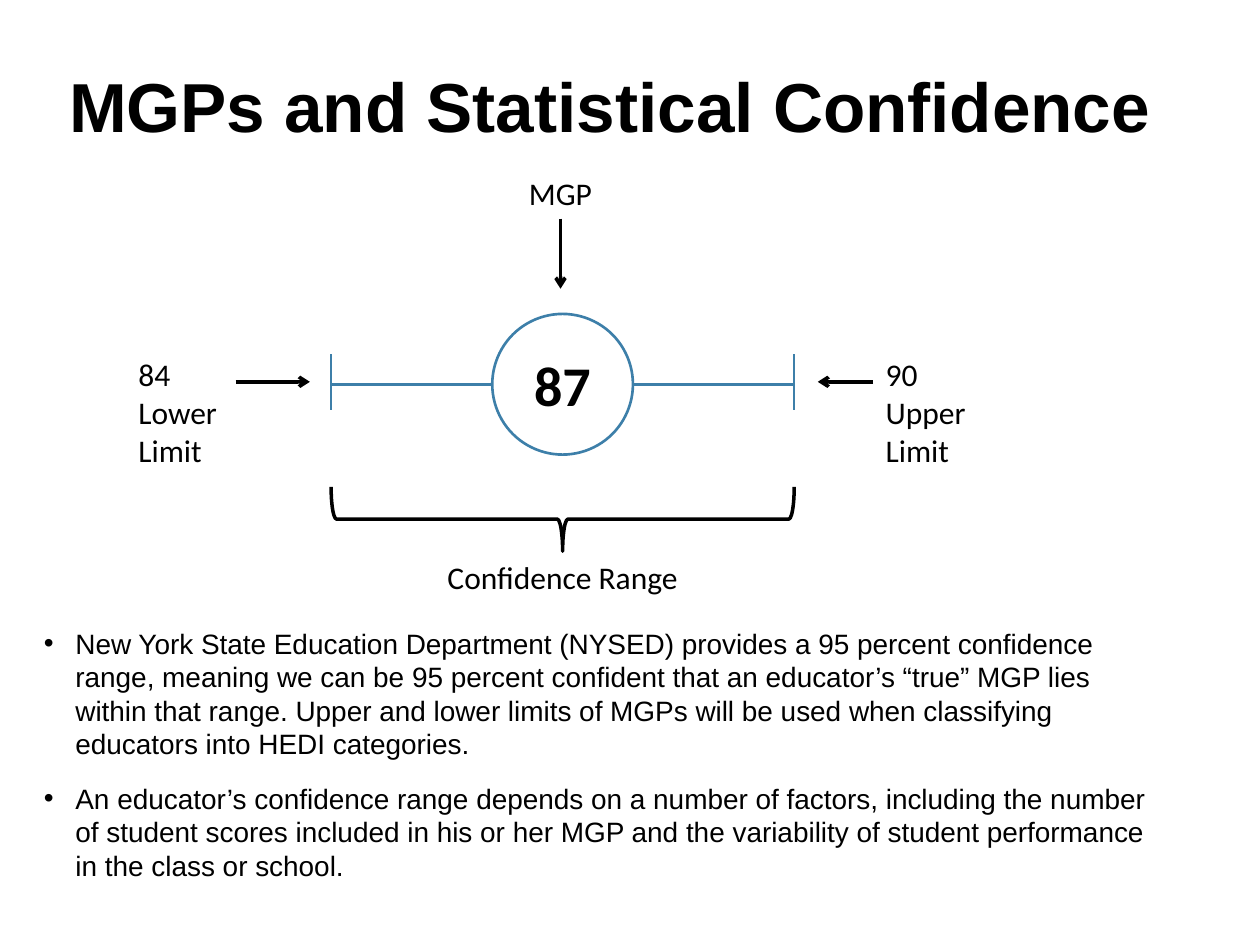
from lxml.etree import SubElement
from pptx import Presentation
from pptx.dml.color import RGBColor
from pptx.enum.shapes import MSO_CONNECTOR, MSO_SHAPE
from pptx.enum.text import MSO_ANCHOR, PP_ALIGN
from pptx.oxml.ns import qn
from pptx.util import Pt

BLACK, BLUE = "000000", "3D7FA9"
LABEL = {"name": "Calibri", "size": Pt(18)}
TITLE = {"name": "Arial", "size": Pt(39.6), "bold": True}
BODY = {"name": "Arial", "size": Pt(16)}
VALUE = {"name": "Calibri", "size": Pt(32), "bold": True}


def color(hex_string):
    return RGBColor.from_string(hex_string)


class Page:
    def __init__(self, prs):
        self.s = prs.slides.add_slide(prs.slide_layouts[6])

    def fill_text(self, sp, lines, font, align=PP_ALIGN.LEFT, anchor=MSO_ANCHOR.TOP,
                  bullet=False, **spacing):
        tf = sp.text_frame
        tf.word_wrap = True
        tf.vertical_anchor = anchor
        for i, line in enumerate(lines):
            p = tf.paragraphs[0] if i == 0 else tf.add_paragraph()
            p.alignment = align
            if bullet:
                self.bullet(p)
            for name, value in spacing.items():
                if i or name != "space_before":
                    setattr(p, name, value)
            r = p.add_run()
            r.text = line
            for name, value in font.items():
                setattr(r.font, name, value)
            r.font.color.rgb = color(BLACK)

    def bullet(self, p):
        pPr = p._p.get_or_add_pPr()
        pPr.set("marL", str(Pt(18)))
        pPr.set("indent", str(Pt(-18)))
        SubElement(pPr, qn("a:buFont")).set("typeface", "Arial")
        SubElement(pPr, qn("a:buChar")).set("char", "•")

    def text(self, x, y, w, h, lines, font, **style):
        sp = self.s.shapes.add_textbox(Pt(x), Pt(y), Pt(w), Pt(h))
        self.fill_text(sp, lines, font, **style)
        return sp

    def outline(self, kind, x, y, w, h, line, width):
        sp = self.s.shapes.add_shape(kind, Pt(x), Pt(y), Pt(w), Pt(h))
        sp.shadow.inherit = False
        sp.fill.background()
        sp.line.color.rgb = color(line)
        sp.line.width = Pt(width)
        return sp

    def line(self, x1, y1, x2, y2, line=BLUE, width=1.5, arrow=False):
        cx = self.s.shapes.add_connector(
            MSO_CONNECTOR.STRAIGHT, Pt(x1), Pt(y1), Pt(x2), Pt(y2))
        cx.line.color.rgb = color(line)
        cx.line.width = Pt(width)
        if arrow:
            ln = cx._element.spPr.find(qn("a:ln"))
            SubElement(ln, qn("a:tailEnd")).set("type", "arrow")
        SubElement(cx._element.spPr, qn("a:effectLst"))
        return cx

    def arrow(self, x1, y1, x2, y2):
        return self.line(x1, y1, x2, y2, BLACK, 2, True)


def main():
    prs = Presentation()
    prs.slide_width, prs.slide_height = Pt(720), Pt(540)
    page = Page(prs)

    page.text(32.4, 20.2, 659.5, 67, ["MGPs and Statistical Confidence"], TITLE,
              anchor=MSO_ANCHOR.BOTTOM, line_spacing=Pt(36))
    page.text(18, 354.2, 653.8, 152.6, [
        "New York State Education Department (NYSED) provides a 95 percent confidence "
        "range, meaning we can be 95 percent confident that an educator’s “true” MGP lies "
        "within that range. Upper and lower limits of MGPs will be used when classifying "
        "educators into HEDI categories.",
        "An educator’s confidence range depends on a number of factors, including the "
        "number of student scores included in his or her MGP and the variability of "
        "student performance in the class or school.",
    ], BODY, bullet=True, space_before=Pt(12))

    mid_x, mid_y, radius, half_range = 321.5, 219.6, 40.2, 132.3
    circle = page.outline(MSO_SHAPE.OVAL, mid_x - radius, mid_y - radius,
                          2 * radius, 2 * radius, BLUE, 1.5)
    page.fill_text(circle, ["87"], VALUE, align=PP_ALIGN.CENTER, anchor=MSO_ANCHOR.MIDDLE)
    for side in (-1, 1):
        limit_x = mid_x + side * half_range
        page.line(mid_x + side * radius, mid_y, limit_x, mid_y)
        page.line(limit_x, 202.4, limit_x, 234)

    brace_w, brace_y = 36.7, 296.6
    brace = page.outline(MSO_SHAPE.LEFT_BRACE, mid_x - brace_w / 2, brace_y - half_range,
                         brace_w, 2 * half_range, BLACK, 2)
    brace.rotation = 270
    brace.adjustments[0] = 0.083
    page.text(mid_x - half_range, 315.4, 2 * half_range, 29, ["Confidence Range"],
              LABEL, align=PP_ALIGN.CENTER)

    arrow_y = 218.2
    limits = [(72, 77, "84", "Lower Limit", 134.6, 177.1),
              (499, 67, "90", "Upper Limit", 499, 467.3)]
    for x, w, value, name, start, end in limits:
        page.text(x, 199.4, w, 72.7, [value, name], LABEL)
        page.arrow(start, arrow_y, end, arrow_y)

    mgp = page.text(286.8, 95.9, 67, 29.1, ["MGP"], LABEL, align=PP_ALIGN.CENTER)
    page.arrow(320.3, 125, 320.3, 165).begin_connect(mgp, 2)

    prs.save("out.pptx")


if __name__ == "__main__":
    main()
